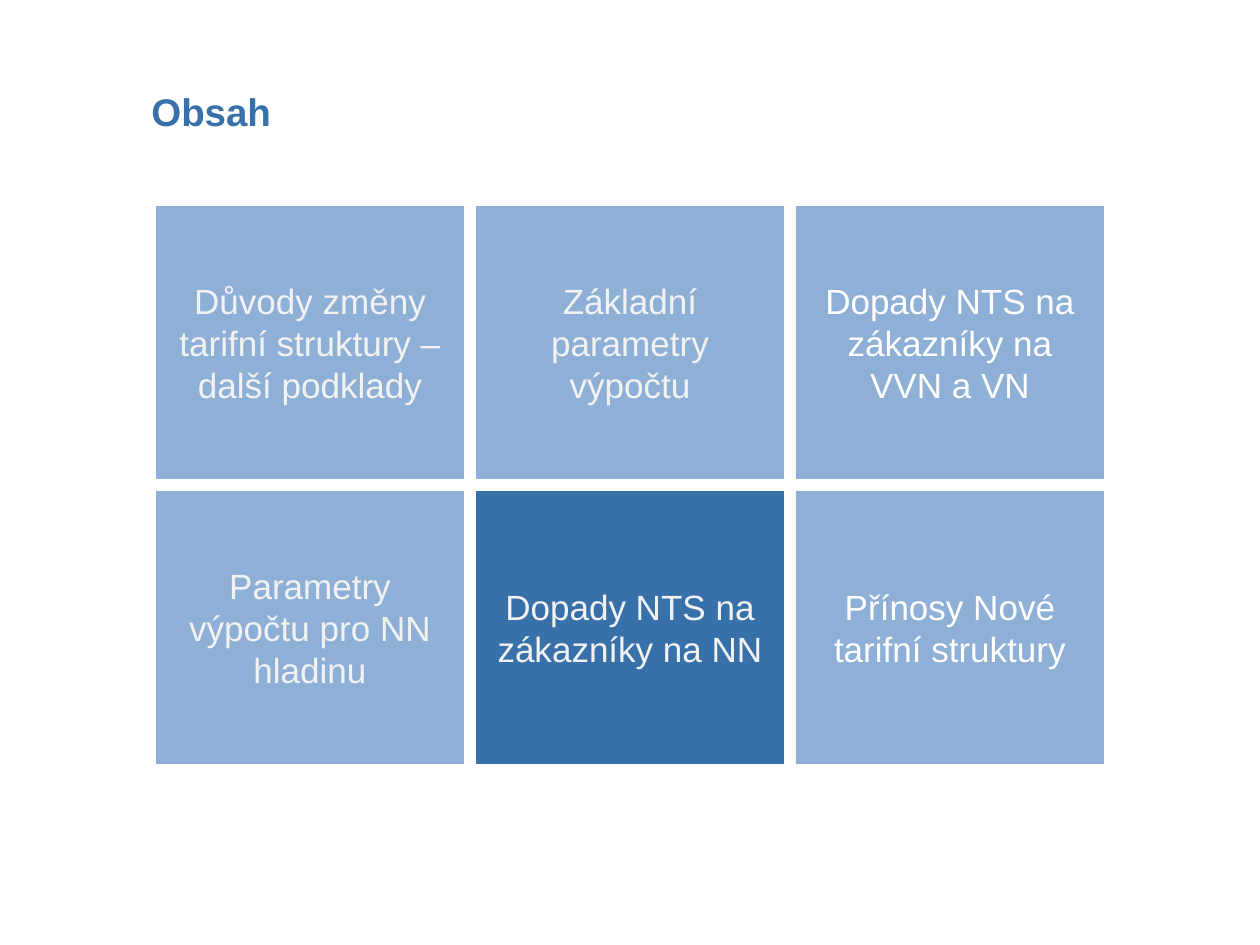
from pptx import Presentation
from pptx.dml.color import RGBColor
from pptx.enum.shapes import MSO_SHAPE
from pptx.enum.text import MSO_ANCHOR, MSO_AUTO_SIZE, PP_ALIGN
from pptx.util import Emu, Pt

RECTANGLE = MSO_SHAPE.RECTANGLE
MIDDLE, BOTTOM = MSO_ANCHOR.MIDDLE, MSO_ANCHOR.BOTTOM
CENTER, RIGHT = PP_ALIGN.CENTER, PP_ALIGN.RIGHT
NO_AUTOFIT = MSO_AUTO_SIZE.NONE

EMU_PER_PX = 914400 / 126
TITLE_ONLY = 5
BLUE, LIGHT_BLUE = "3871AA", "8EAFD6"
WHITE, PALE_GRAY = "FFFFFF", "F2F2F2"

TILE_LEFT, TILE_TOP = 156, 206
TILE_WIDTH, TILE_HEIGHT, GAP = 308, 273, 12
TOPICS = [
    [("Důvody změny tarifní struktury – další podklady", LIGHT_BLUE, PALE_GRAY),
     ("Základní parametry výpočtu", LIGHT_BLUE, PALE_GRAY),
     ("Dopady NTS na zákazníky na VVN a VN", LIGHT_BLUE, WHITE)],
    [("Parametry výpočtu pro NN hladinu", LIGHT_BLUE, PALE_GRAY),
     ("Dopady NTS na zákazníky na NN", BLUE, PALE_GRAY),
     ("Přínosy Nové tarifní struktury", LIGHT_BLUE, WHITE)],
]


def px(length):
    return Emu(round(length * EMU_PER_PX))


def paint(color_format, color):
    color_format.rgb = RGBColor.from_string(color)


def fill_solid(shape, color):
    shape.fill.solid()
    paint(shape.fill.fore_color, color)


def write(shape, text, *, size, color, font, bold=False, align=CENTER,
          anchor=MIDDLE, insets=(15, 5, 15, 5)):
    """Put one formatted paragraph in a shape; insets run left, top, right, bottom."""
    frame = shape.text_frame
    frame.word_wrap = True
    frame.auto_size = NO_AUTOFIT
    frame.vertical_anchor = anchor
    (frame.margin_left, frame.margin_top,
     frame.margin_right, frame.margin_bottom) = map(px, insets)
    para = frame.paragraphs[0]
    para.alignment = align
    span = para.add_run()
    span.text = text
    span.font.name = font
    span.font.size = Pt(size)
    span.font.bold = bold
    paint(span.font.color, color)


class SlideBuilder:
    """Holds the slide being built and its shared text style."""

    def __init__(self, page, font="Arial", title_size=22, tile_size=20):
        self.page = page
        self.font = font
        self.title_size = title_size
        self.tile_size = tile_size

    def title(self, text, left, top, width, height):
        box = self.page.shapes.title
        box.left, box.top, box.width, box.height = map(px, (left, top, width, height))
        fill_solid(box, WHITE)
        write(box, text, size=self.title_size, color=BLUE, font=self.font, bold=True,
              align=RIGHT, anchor=BOTTOM, insets=(15, 49, 20, 15))

    def tile(self, text, left, top, fill, color):
        box = self.page.shapes.add_shape(
            RECTANGLE, px(left), px(top), px(TILE_WIDTH), px(TILE_HEIGHT))
        box.shadow.inherit = False
        fill_solid(box, fill)
        box.line.fill.background()
        write(box, text, size=self.tile_size, color=color, font=self.font)


def main():
    deck = Presentation()
    deck.slide_width, deck.slide_height = px(1260), px(945)
    builder = SlideBuilder(deck.slides.add_slide(deck.slide_layouts[TITLE_ONLY]))
    builder.title("Obsah", 0, 0, 291, 149)
    for row, topics in enumerate(TOPICS):
        for column, (text, fill, color) in enumerate(topics):
            builder.tile(text, TILE_LEFT + column * (TILE_WIDTH + GAP),
                         TILE_TOP + row * (TILE_HEIGHT + GAP), fill, color)
    deck.save("out.pptx")


if __name__ == "__main__":
    main()
